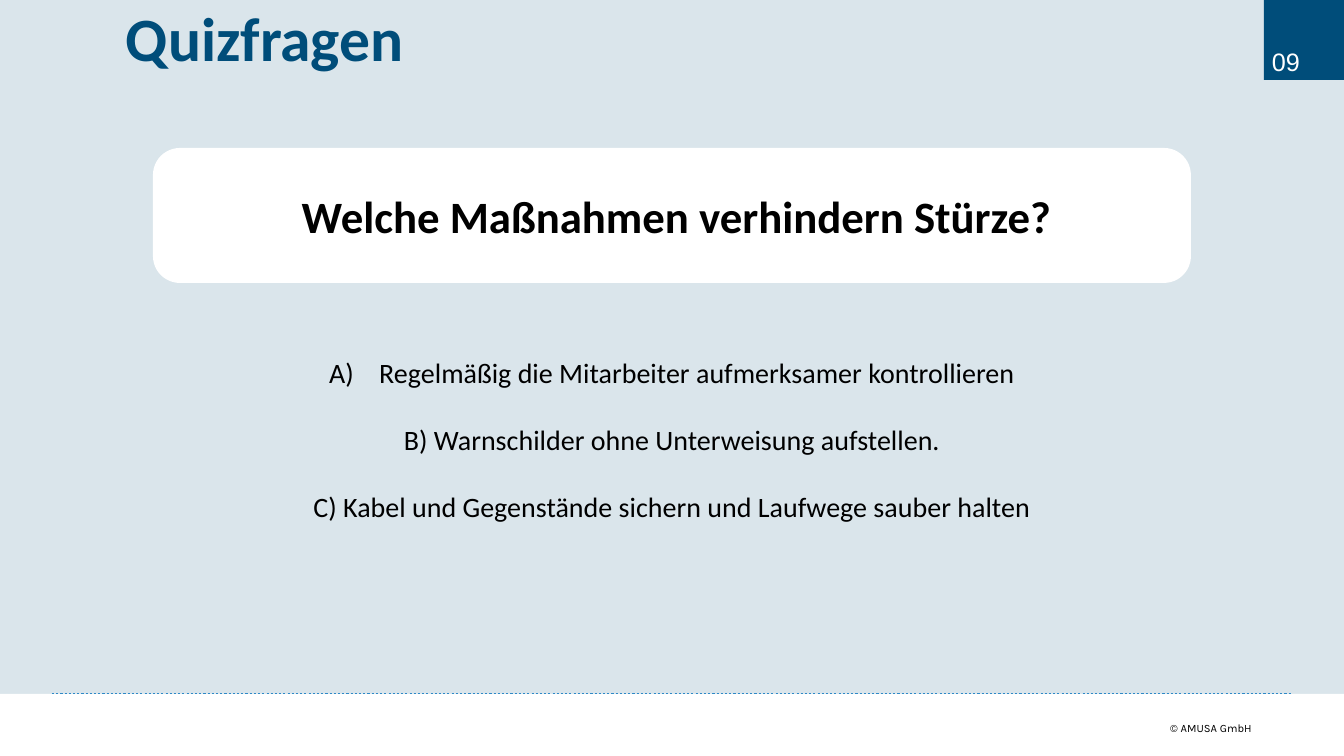
from dataclasses import dataclass

from pptx import Presentation
from pptx.dml.color import RGBColor
from pptx.enum.dml import MSO_LINE
from pptx.enum.shapes import MSO_CONNECTOR, MSO_SHAPE
from pptx.enum.text import MSO_ANCHOR, MSO_AUTO_SIZE, PP_ALIGN
from pptx.oxml.ns import qn
from pptx.util import Pt
from lxml.etree import SubElement

EMU_PER_PX = 914400 / 100.8
SLIDE_WIDTH, SLIDE_HEIGHT = 1344, 756


@dataclass(frozen=True)
class Theme:
    background: str = "DAE5EB"
    navy: str = "004D7A"
    dots: str = "1179BF"
    white: str = "FFFFFF"
    black: str = "000000"
    font: str = "Calibri"
    number_font: str = "Arial"
    footer_font: str = "Karla"
    title_size: int = 44
    question_size: int = 32
    answer_size: int = 20
    number_size: int = 18
    footer_size: int = 8


def px(length):
    return round(length * EMU_PER_PX)


def color(code):
    return RGBColor.from_string(code)


def write(shape, lines, *, size, font=Theme.font, fill=Theme.black, bold=False,
          align=PP_ALIGN.LEFT, anchor=MSO_ANCHOR.TOP, insets=(10, 5, 10, 5),
          wrap=True, leading=None, gap=0, lettered=0):
    """Fill a shape with one paragraph per line; the first `lettered` get A), B) ..."""
    frame = shape.text_frame
    frame.auto_size = MSO_AUTO_SIZE.NONE
    frame.word_wrap = wrap
    frame.vertical_anchor = anchor
    frame.margin_left, frame.margin_top, frame.margin_right, frame.margin_bottom = map(px, insets)
    for index, line in enumerate(lines):
        paragraph = frame.add_paragraph() if index else frame.paragraphs[0]
        paragraph.text = line
        paragraph.alignment = align
        paragraph.space_before = Pt(gap if index else 0)
        if leading:
            paragraph.line_spacing = Pt(leading)
        if index < lettered:
            properties = paragraph._p.get_or_add_pPr()
            properties.set("marL", str(px(50)))
            properties.set("indent", str(-px(50)))
            SubElement(properties, qn("a:buFont"), typeface=font)
            SubElement(properties, qn("a:buAutoNum"), type="alphaUcParenR")
        style = paragraph.runs[0].font
        style.name, style.size, style.bold = font, Pt(size), bold
        style.color.rgb = color(fill)


class QuizSlide:
    def __init__(self, presentation, theme):
        self.theme = theme
        self.slide = presentation.slides.add_slide(presentation.slide_layouts[5])
        self.shapes = self.slide.shapes
        background = self.slide.background.fill
        background.solid()
        background.fore_color.rgb = color(theme.background)

    def title(self, text, left, top, width, height, **style):
        shape = self.shapes.title
        shape.left, shape.top, shape.width, shape.height = map(px, (left, top, width, height))
        write(shape, [text], **style)

    def text(self, lines, left, top, width, height, **style):
        write(self.shapes.add_textbox(*map(px, (left, top, width, height))), lines, **style)

    def block(self, left, top, width, height, fill, rounding=None):
        kind = MSO_SHAPE.ROUNDED_RECTANGLE if rounding else MSO_SHAPE.RECTANGLE
        shape = self.shapes.add_shape(kind, *map(px, (left, top, width, height)))
        if rounding:
            shape.adjustments[0] = rounding
        shape.shadow.inherit = False
        shape.fill.solid()
        shape.fill.fore_color.rgb = color(fill)
        shape.line.fill.background()
        return shape

    def dotted_line(self, left, right, y):
        line = self.shapes.add_connector(MSO_CONNECTOR.STRAIGHT, *map(px, (left, y, right, y)))
        line.line.color.rgb = color(self.theme.dots)
        line.line.width = Pt(1.5)
        line.line.dash_style = MSO_LINE.ROUND_DOT
        SubElement(line._element.spPr, qn("a:effectLst"))


def main():
    theme = Theme()
    presentation = Presentation()
    presentation.slide_width, presentation.slide_height = px(SLIDE_WIDTH), px(SLIDE_HEIGHT)
    quiz = QuizSlide(presentation, theme)

    # Footer
    footer_top = 694
    quiz.dotted_line(52, 1291, footer_top)
    quiz.block(0, footer_top, SLIDE_WIDTH, SLIDE_HEIGHT - footer_top, theme.white)
    quiz.text(["© AMUSA GmbH"], 1120, 720, 132, 14, size=theme.footer_size,
              font=theme.footer_font, align=PP_ALIGN.RIGHT, anchor=MSO_ANCHOR.MIDDLE,
              insets=(0, 0, 0, 0), leading=10.7)

    # Title
    quiz.title("Quizfragen", 116, 24, 889, 56, size=theme.title_size,
               fill=theme.navy, bold=True, leading=32)

    # Question
    question = quiz.block(153, 148, 1038, 135, theme.white, rounding=0.2)
    write(question, ["Welche Maßnahmen verhindern Stürze?"], size=theme.question_size,
          bold=True, align=PP_ALIGN.CENTER, anchor=MSO_ANCHOR.MIDDLE, insets=(30, 0, 20, 0))

    # Page number
    quiz.block(1264, 0, 80, 80, theme.navy)
    quiz.text(["09"], 1272, 46, 30, 30, size=theme.number_size, font=theme.number_font,
              fill=theme.white, insets=(0, 0, 0, 0), wrap=False)

    # Answers
    answers = [
        "Regelmäßig die Mitarbeiter aufmerksamer kontrollieren",
        "B) Warnschilder ohne Unterweisung aufstellen.",
        "C) Kabel und Gegenstände sichern und Laufwege sauber halten",
    ]
    quiz.text(answers, 153, 350, 1038, 179, size=theme.answer_size,
              align=PP_ALIGN.CENTER, gap=24, lettered=1)

    presentation.save("out.pptx")


if __name__ == "__main__":
    main()
